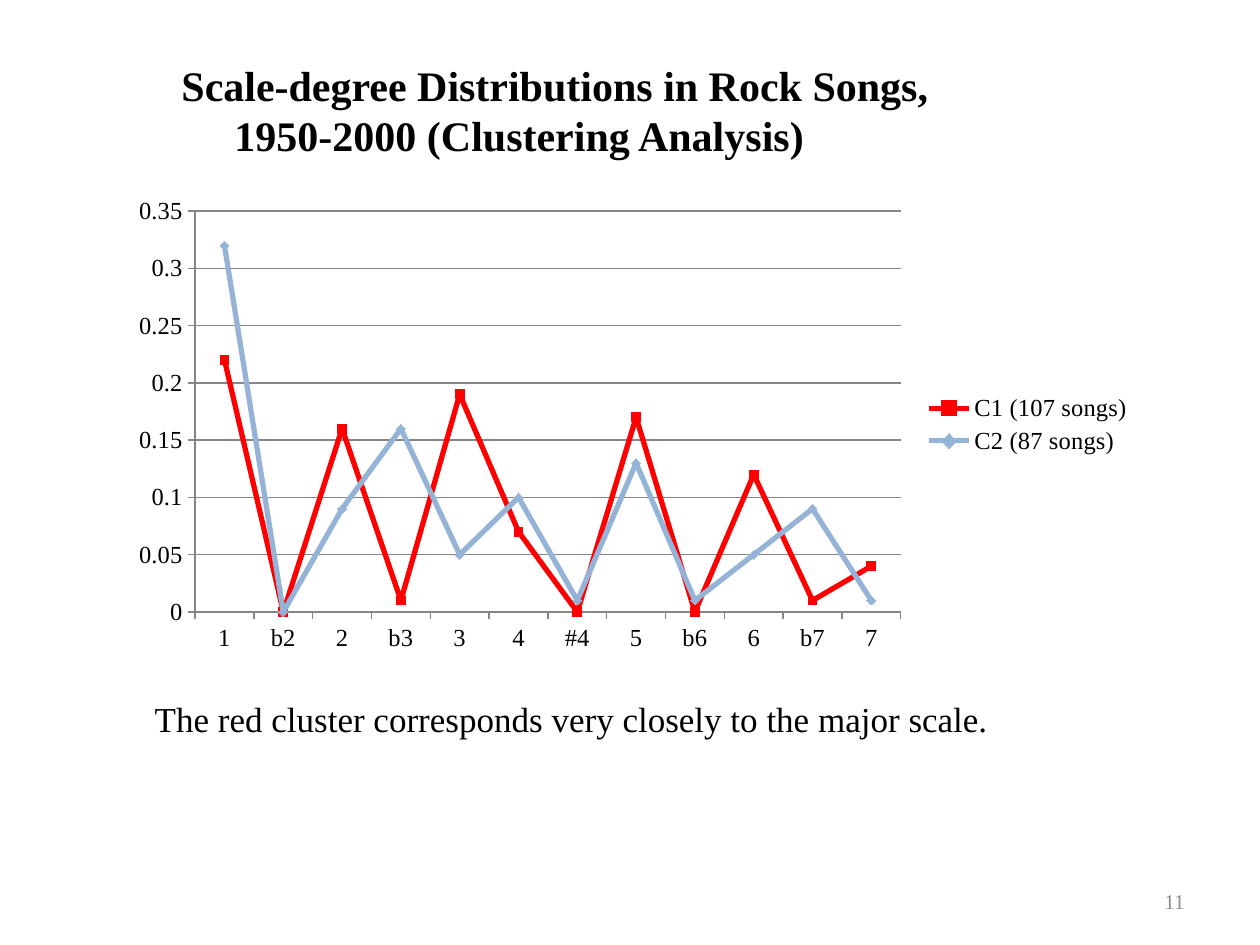
from pptx import Presentation
from pptx.chart.data import CategoryChartData
from pptx.dml.color import RGBColor
from pptx.enum.chart import XL_CHART_TYPE, XL_LEGEND_POSITION, XL_MARKER_STYLE, XL_TICK_MARK
from pptx.enum.text import MSO_ANCHOR, MSO_AUTO_SIZE, PP_ALIGN
from pptx.util import Inches, Pt

FONT = "Times New Roman"
BLACK, GRAY, RED, BLUE = "000000", "8C8C8C", "FF0000", "95B3D7"
DEGREES = ["1", "b2", "2", "b3", "3", "4", "#4", "5", "b6", "6", "b7", "7"]
CLUSTERS = [
    ("C1 (107 songs)", RED, XL_MARKER_STYLE.SQUARE,
     [0.22, 0, 0.16, 0.01, 0.19, 0.07, 0, 0.17, 0, 0.12, 0.01, 0.04]),
    ("C2 (87 songs)", BLUE, XL_MARKER_STYLE.DIAMOND,
     [0.32, 0, 0.09, 0.16, 0.05, 0.1, 0.01, 0.13, 0.01, 0.05, 0.09, 0.01]),
]


def rgb(color):
    return RGBColor.from_string(color)


def style_font(font, size, color=BLACK, bold=False):
    font.name = FONT
    font.size = Pt(size)
    font.bold = bold
    font.color.rgb = rgb(color)


def style_line(line, color, width):
    line.color.rgb = rgb(color)
    line.width = Pt(width)


def add_title(slide, box, lines):
    sp = slide.shapes.title
    sp.left, sp.top, sp.width, sp.height = box
    tf = sp.text_frame
    tf.text = "\n".join(lines)
    tf.word_wrap = False
    tf.auto_size = MSO_AUTO_SIZE.NONE
    tf.vertical_anchor = MSO_ANCHOR.TOP
    for p in tf.paragraphs:
        p.alignment = PP_ALIGN.LEFT
        style_font(p.runs[0].font, 24, bold=True)
    tf.paragraphs[1]._p.get_or_add_pPr().set("marL", str(Inches(0.42)))


def add_text(slide, box, text, size, color=BLACK, align=PP_ALIGN.LEFT):
    tf = slide.shapes.add_textbox(*box).text_frame
    tf.word_wrap = True
    tf.vertical_anchor = MSO_ANCHOR.MIDDLE
    tf.text = text
    p = tf.paragraphs[0]
    p.alignment = align
    style_font(p.runs[0].font, size, color)


def add_cluster_chart(slide, box):
    data = CategoryChartData(number_format="General")
    data.categories = DEGREES
    for name, _, _, values in CLUSTERS:
        data.add_series(name, values)
    chart = slide.shapes.add_chart(XL_CHART_TYPE.LINE_MARKERS, *box, data).chart
    chart.has_title = False
    style_font(chart.font, 14)
    chart.has_legend = True
    chart.legend.position = XL_LEGEND_POSITION.RIGHT
    chart.legend.include_in_layout = False
    style_font(chart.legend.font, 14)

    for axis in (chart.category_axis, chart.value_axis):
        axis.major_tick_mark = XL_TICK_MARK.OUTSIDE
        style_font(axis.tick_labels.font, 14)
        style_line(axis.format.line, "868686", 0.75)
    axis = chart.value_axis
    axis.minimum_scale, axis.maximum_scale, axis.major_unit = 0, 0.35, 0.05
    axis.has_major_gridlines = True
    style_line(axis.major_gridlines.format.line, "868686", 0.75)

    plot = chart.plots[0]
    plot.vary_by_categories = False
    for series, (_, color, marker, _) in zip(plot.series, CLUSTERS):
        series.smooth = False
        style_line(series.format.line, color, 3)
        series.marker.style = marker
        series.marker.size = 5
        series.marker.format.fill.solid()
        series.marker.format.fill.fore_color.rgb = rgb(color)
        series.marker.format.line.color.rgb = rgb(color)


def main():
    prs = Presentation()
    prs.slide_width, prs.slide_height = Inches(10), Inches(7.5)
    slide = prs.slides.add_slide(prs.slide_layouts[5])
    add_cluster_chart(slide, (Inches(0.94), Inches(1.49), Inches(8.15), Inches(3.76)))
    add_title(slide, (Inches(1.34), Inches(0.42), Inches(6.84), Inches(0.91)),
              ["Scale-degree Distributions in Rock Songs,",
               "1950-2000 (Clustering Analysis)"])
    add_text(slide, (Inches(1.13), Inches(5.5), Inches(7.96), Inches(0.4)),
             "The red cluster corresponds very closely to the major scale.", 20)
    add_text(slide, (Inches(7.17), Inches(6.95), Inches(2.33), Inches(0.4)),
             "11", 12, GRAY, PP_ALIGN.RIGHT)
    prs.save("out.pptx")


if __name__ == "__main__":
    main()
